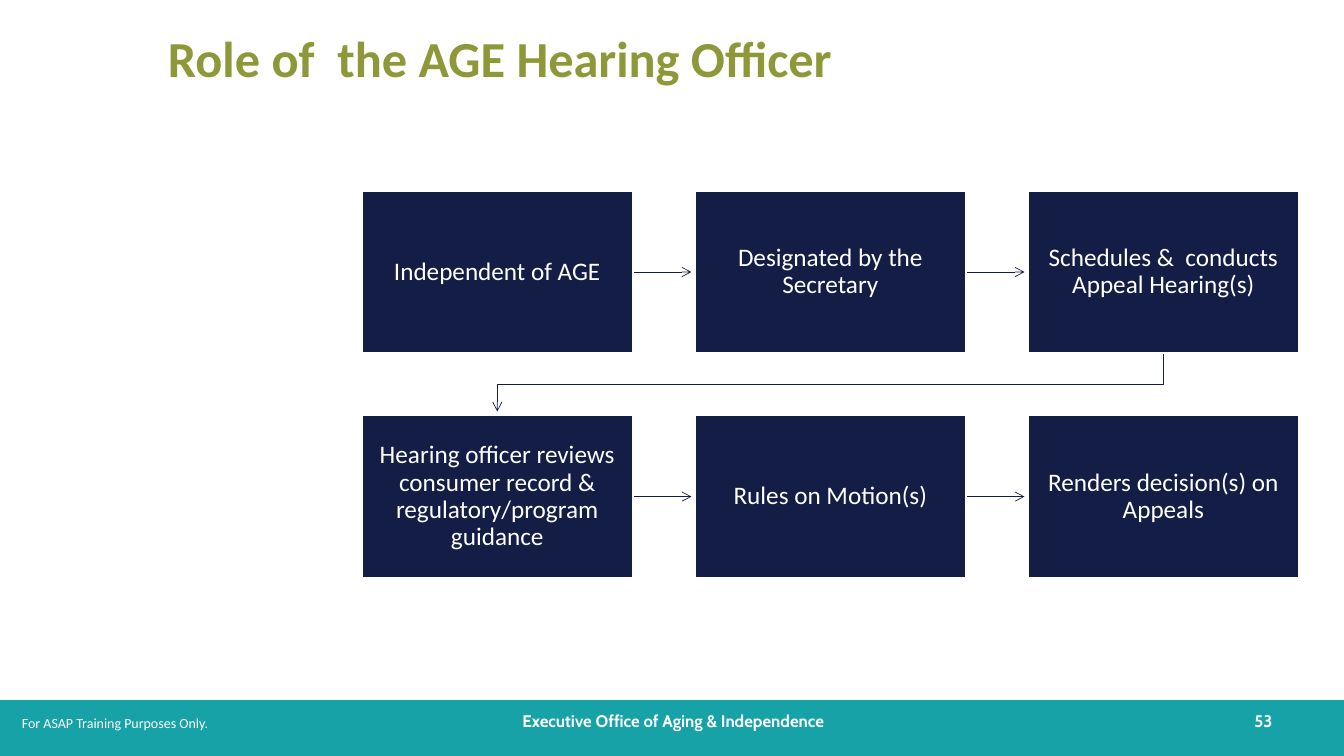
from lxml import etree
from pptx import Presentation
from pptx import util as u
from pptx.dml.color import RGBColor
from pptx.enum import shapes, text
from pptx.oxml import ns

Pt = u.Pt
NAVY = RGBColor(0x14, 0x1D, 0x45)
TEAL = RGBColor(0x16, 0xA2, 0xA7)
OLIVE = RGBColor(0x8E, 0x98, 0x38)
WHITE = RGBColor(0xFF, 0xFF, 0xFF)
LEFT, CENTER, RIGHT = text.PP_ALIGN.LEFT, text.PP_ALIGN.CENTER, text.PP_ALIGN.RIGHT
MIDDLE, TOP = text.MSO_ANCHOR.MIDDLE, text.MSO_ANCHOR.TOP


def write(sp, words, align, anchor, spacing, margins, font):
    tf = sp.text_frame
    frame = {"word_wrap": True, "vertical_anchor": anchor}
    for side, m in zip(("left", "top", "right", "bottom"), margins):
        frame["margin_" + side] = Pt(m)
    for name, value in frame.items():
        setattr(tf, name, value)
    p = tf.paragraphs[0]
    p.alignment, p.line_spacing = align, spacing
    r = p.add_run()
    r.text = words
    r.font.color.rgb = font["color"]
    for name in ("name", "size", "bold"):
        setattr(r.font, name, font[name])


def style_arrow(sp):
    sp.line.color.rgb = NAVY
    sp.line.width = Pt(0.5)
    ln = sp.line._get_or_add_ln()
    etree.SubElement(ln, ns.qn("a:tailEnd"), type="arrow")
    etree.SubElement(sp._element.spPr, ns.qn("a:effectLst"))


prs = Presentation()
prs.slide_width, prs.slide_height = Pt(960), Pt(540)
s = prs.slides.add_slide(prs.slide_layouts[6])

# Footer band
band = s.shapes.add_shape(shapes.MSO_SHAPE.RECTANGLE, 0, Pt(500), Pt(960), Pt(40))
band.shadow.inherit = False
band.fill.solid()
band.fill.fore_color.rgb = TEAL
band.line.fill.background()

# Title and footer texts
inset = (7.2, 3.6, 7.2, 3.6)
title_font = {"name": "Calibri", "size": Pt(36), "bold": True, "color": OLIVE}
footer_font = {"name": "Cabin", "size": Pt(12), "bold": True, "color": WHITE}
note_font = {"name": "Calibri", "size": Pt(10), "bold": False, "color": WHITE}
for x, y, w, h, words, align, anchor, spacing, margins, font in (
    (120, 27.5, 800, 32, "Role of  the AGE Hearing Officer", LEFT, MIDDLE, 0.9, (0, 0, 0, 0), title_font),
    (319, 500.5, 324, 29, "Executive Office of Aging & Independence", CENTER, MIDDLE, 1.0, inset, footer_font),
    (879, 500.5, 37, 29, "53", RIGHT, MIDDLE, 1.0, inset, footer_font),
    (8.6, 507, 264, 19.4, "For ASAP Training Purposes Only.", LEFT, TOP, 1.0, inset, note_font),
):
    sp = s.shapes.add_textbox(Pt(x), Pt(y), Pt(w), Pt(h))
    write(sp, words, align, anchor, spacing, margins, font)

# Flow grid
X0, Y0, BOX_W, BOX_H = 258.5, 136.3, 193.4, 116
STEP_X, STEP_Y = 237.9, 160.4
steps = (
    ("Independent of AGE", "Designated by the Secretary", "Schedules &  conducts Appeal Hearing(s)"),
    ("Hearing officer reviews consumer record & regulatory/program guidance",
     "Rules on Motion(s)", "Renders decision(s) on Appeals"),
)

# Arrows along each row
for row in range(2):
    for col in range(2):
        x = X0 + col * STEP_X + BOX_W
        y = Y0 + row * STEP_Y + BOX_H / 2
        style_arrow(s.shapes.add_connector(shapes.MSO_CONNECTOR.STRAIGHT, Pt(x), Pt(y), Pt(x + 42), Pt(y)))

# Bent arrow from the end of row one to the start of row two
x_end = X0 + BOX_W / 2
x_start = x_end + 2 * STEP_X
y_start = Y0 + BOX_H
y_turn = y_start + (STEP_Y - BOX_H) / 2
fb = s.shapes.build_freeform(Pt(x_start), Pt(y_start))
fb.add_line_segments([(Pt(x_start), Pt(y_turn)), (Pt(x_end), Pt(y_turn)),
                      (Pt(x_end), Pt(y_start + 41.6))], close=False)
bend = fb.convert_to_shape()
bend.fill.background()
style_arrow(bend)

# Step boxes
box_font = {"name": "Calibri", "size": Pt(18), "bold": False, "color": WHITE}
for row, labels in enumerate(steps):
    for col, words in enumerate(labels):
        sp = s.shapes.add_shape(shapes.MSO_SHAPE.RECTANGLE, Pt(X0 + col * STEP_X),
                                Pt(Y0 + row * STEP_Y), Pt(BOX_W), Pt(BOX_H))
        sp.shadow.inherit = False
        sp.fill.solid()
        sp.fill.fore_color.rgb = NAVY
        sp.line.color.rgb = WHITE
        sp.line.width = Pt(1.5)
        write(sp, words, CENTER, MIDDLE, 0.9, (10, 10, 10, 10), box_font)

prs.save("out.pptx")
